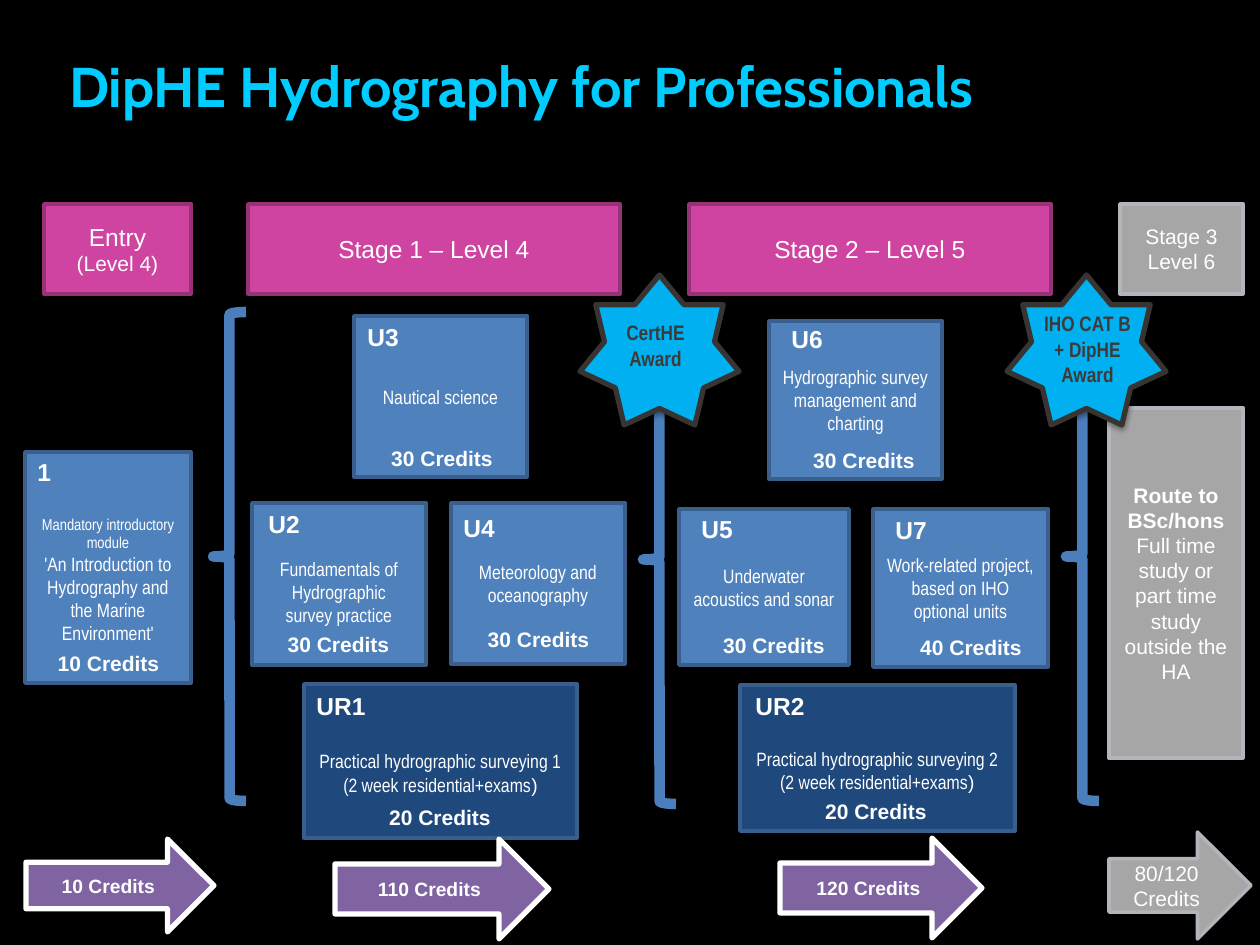
from lxml import etree
from pptx import Presentation
from pptx.dml.color import RGBColor
from pptx.enum.shapes import MSO_SHAPE as Shape
from pptx.enum.text import MSO_ANCHOR as Anchor, PP_ALIGN as Align
from pptx.oxml import parse_xml
from pptx.oxml.ns import nsdecls, qn
from pptx.util import Emu, Pt

PX = 914400 / 126

BLACK = RGBColor(0x00, 0x00, 0x00)
WHITE = RGBColor(0xFF, 0xFF, 0xFF)
CYAN = RGBColor(0x00, 0xCC, 0xFF)
PINK = RGBColor(0xCE, 0x44, 0xA0)
PLUM = RGBColor(0x98, 0x32, 0x76)
BLUE = RGBColor(0x4F, 0x81, 0xBD)
NAVY = RGBColor(0x1F, 0x49, 0x7D)
STEEL = RGBColor(0x3A, 0x5F, 0x8C)
BRACE_BLUE = RGBColor(0x4B, 0x7E, 0xBC)
PURPLE = RGBColor(0x80, 0x64, 0xA2)
SKY = RGBColor(0x00, 0xB0, 0xF0)
CHARCOAL = RGBColor(0x37, 0x34, 0x32)
DARK_GREY = RGBColor(0x3B, 0x3B, 0x3B)
GREY = RGBColor(0xA6, 0xA6, 0xA6)
SILVER = RGBColor(0xB2, 0xB5, 0xBB)
NARROW = "Arial Narrow"

SHADOW = (
    f'<a:outerShdw {nsdecls("a")} blurRad="40000" dist="20000" dir="5400000" rotWithShape="0">'
    '<a:srgbClr val="000000"><a:alpha val="38000"/></a:srgbClr></a:outerShdw>'
)

deck = Presentation()
deck.slide_width, deck.slide_height = Emu(round(1260 * PX)), Emu(round(945 * PX))
slide = deck.slides.add_slide(deck.slide_layouts[6])
slide.background.fill.solid()
slide.background.fill.fore_color.rgb = BLACK


def add_part(box, kind=None, fill=None, edge=None, weight=2, shadow=False, top=6):
    """Add a preset shape, or a text box when no kind is given; return its text frame."""
    place = [Emu(round(length * PX)) for length in box]
    if kind is None:
        part = slide.shapes.add_textbox(*place)
    else:
        part = slide.shapes.add_shape(kind, *place)
        part.shadow.inherit = False
        if shadow:
            part._element.spPr.find(qn("a:effectLst")).append(parse_xml(SHADOW))
        if fill is None:
            part.fill.background()
        else:
            part.fill.solid()
            part.fill.fore_color.rgb = fill
        part.line.color.rgb = edge
        part.line.width = Pt(weight)
    frame = part.text_frame
    frame.word_wrap = True
    frame.vertical_anchor = Anchor.TOP if kind is None else Anchor.MIDDLE
    frame.margin_top = Emu(round(top * PX))
    return frame


def write(frame, text, size=11, font="Arial", color=WHITE, bold=False,
          align=Align.CENTER, same_line=False):
    """Add a paragraph per line of text, or continue the last paragraph."""
    for line in text.split("\n"):
        paragraph = frame.paragraphs[-1]
        if paragraph.runs and not same_line:
            paragraph = frame.add_paragraph()
        paragraph.alignment = align
        run = paragraph.add_run()
        run.text = line
        run.font.size, run.font.name, run.font.bold = Pt(size), font, bold
        run.font.color.rgb = color


# Title
title = add_part((63, 6, 1102, 158))
title.vertical_anchor = Anchor.MIDDLE
title.margin_left = title.margin_right = Emu(round(6 * PX))
write(title, "DipHE Hydrography for Professionals", size=32, font="Cabin",
      color=CYAN, bold=True, align=Align.LEFT)

# Stage headers
entry = add_part((44, 204, 147, 90), Shape.RECTANGLE, PINK, PLUM)
write(entry, "Entry", size=14)
write(entry, "(Level 4)", size=12)
for left, width, stage in [(248, 372, "Stage 1 – Level 4"), (689, 362, "Stage 2 – Level 5")]:
    write(add_part((left, 204, width, 90), Shape.RECTANGLE, PINK, PLUM), stage, size=14)
final_stage = add_part((1120, 204, 123, 90), Shape.RECTANGLE, GREY, SILVER)
write(final_stage, "Stage 3 Level 6", size=12)

# Route to the full degree
route = add_part((1109, 408, 134, 350), Shape.RECTANGLE, GREY, SILVER)
write(route, "Route to\nBSc/hons", size=12, bold=True)
write(route, "Full time study or part time study outside the HA", size=12)

# Braces between the stages
for left, top in [(213, 312), (643, 315), (1066, 312)]:
    add_part((left, top, 33, 489), Shape.LEFT_BRACE, edge=BRACE_BLUE, weight=6)

# Introductory module
intro = add_part((25, 452, 166, 231), Shape.RECTANGLE, BLUE, STEEL, top=30)
write(intro, "Mandatory introductory module", size=9, font=NARROW)
write(intro, "'An Introduction to Hydrography and the Marine Environment'", font=NARROW)

# Taught units: box, top inset, topic
units = [
    ((354, 316, 173, 161), 6, "Nautical science"),
    ((252, 503, 174, 162), 22, "Fundamentals of\nHydrographic\nsurvey practice"),
    ((451, 503, 174, 161), 6, "Meteorology and oceanography"),
    ((769, 321, 173, 158), 6, "Hydrographic survey management and charting"),
    ((679, 509, 170, 156), 6, "Underwater acoustics and sonar"),
    ((873, 509, 175, 158), 6, "Work-related project, based on IHO optional units"),
]
for box, inset, topic in units:
    write(add_part(box, Shape.RECTANGLE, BLUE, STEEL, top=inset), topic, font=NARROW)

# Residential units
for number, box in enumerate([(304, 684, 273, 154), (740, 685, 275, 146)], start=1):
    residential = add_part(box, Shape.RECTANGLE, NAVY, STEEL, top=30)
    write(residential, f"Practical hydrographic surveying {number}\n(2 week residential+exams",
          font=NARROW)
    write(residential, ")", same_line=True)

# Unit codes
codes = [
    ("1", 25, 451, 84), ("U2", 256, 503, 84), ("U3", 355, 316, 84), ("U4", 451, 507, 84),
    ("U5", 689, 508, 84), ("U6", 779, 318, 84), ("U7", 883, 509, 84),
    ("UR1", 304, 685, 122), ("UR2", 743, 685, 122),
]
for code, left, top, width in codes:
    write(add_part((left, top, width, 43)), code, size=14, bold=True, align=Align.LEFT)

# Unit credits
credits = [
    (10, 35, 645, 147), (30, 265, 626, 147), (30, 357, 440, 170), (30, 465, 621, 147),
    (30, 689, 627, 170), (30, 779, 442, 170), (40, 886, 629, 170),
    (20, 302, 799, 276), (20, 738, 793, 276),
]
for amount, left, top, width in credits:
    write(add_part((left, top, width, 38)), f"{amount} Credits", size=12, bold=True)

# Award stars
awards = [
    (580, (595, 314, 121, 63), "CertHE Award"),
    (1007, (1019, 305, 137, 89), "IHO CAT B\n+ DipHE Award"),
]
for left, caption_box, award in awards:
    add_part((left, 275, 159, 150), Shape.STAR_7_POINT, SKY, CHARCOAL, weight=3, shadow=True)
    write(add_part(caption_box), award, size=12, font=NARROW, color=DARK_GREY, bold=True)

# Credit totals
totals = [
    ((26, 839, 188, 93), "10 Credits"),
    ((335, 839, 214, 100), "110 Credits"),
    ((780, 838, 202, 100), "120 Credits"),
]
for box, total in totals:
    write(add_part(box, Shape.RIGHT_ARROW, PURPLE, WHITE, weight=3, shadow=True),
          total, bold=True)
final_total = add_part((1109, 832, 142, 107), Shape.RIGHT_ARROW, GREY, SILVER)
write(final_total, "80/120 Credits", size=12)

deck.save("out.pptx")
